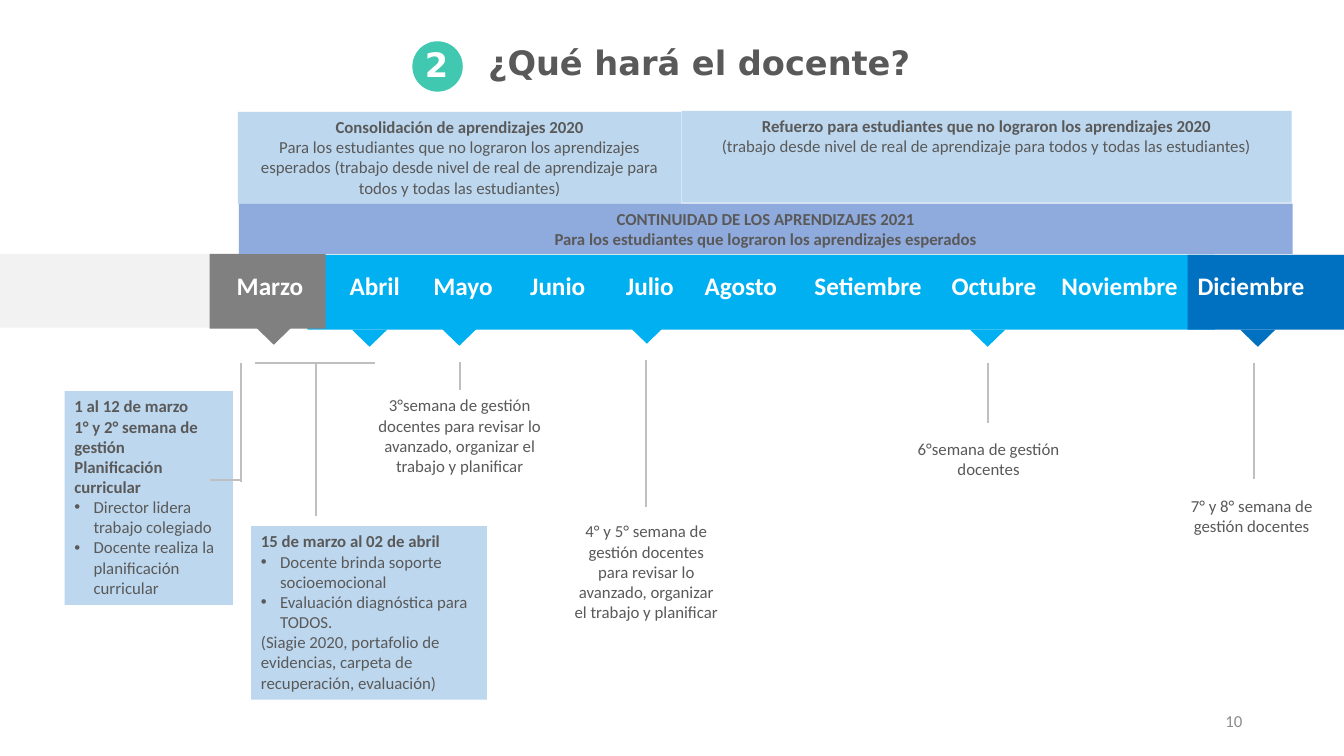
from lxml.etree import SubElement
from pptx import Presentation
from pptx.dml.color import RGBColor
from pptx.enum.shapes import MSO_CONNECTOR, MSO_SHAPE
from pptx.enum.text import MSO_ANCHOR, MSO_AUTO_SIZE, PP_ALIGN
from pptx.oxml.ns import qn
from pptx.util import Pt

WHITE = RGBColor(0xFF, 0xFF, 0xFF)
TEXT_GRAY = RGBColor(0x59, 0x59, 0x59)
NUMBER_GRAY = RGBColor(0x8C, 0x8C, 0x8C)
LINE_GRAY = RGBColor(0xBF, 0xBF, 0xBF)
PALE_GRAY = RGBColor(0xF2, 0xF2, 0xF2)
MARCH_GRAY = RGBColor(0x80, 0x80, 0x80)
SKY = RGBColor(0x00, 0xB0, 0xF0)
DEEP_BLUE = RGBColor(0x00, 0x70, 0xC0)
LIGHT_BLUE = RGBColor(0xBD, 0xD7, 0xEE)
PERIWINKLE = RGBColor(0x8F, 0xAA, 0xDC)
GREEN = RGBColor(0x40, 0xC8, 0xB1)

BODY_FONT, TITLE_FONT = "Calibri", "DejaVu Sans"
PX = 9144
BOLD, PLAIN, BULLET = "bold", "plain", "bullet"

TITLE = "¿Qué hará el docente?"
STEP_NUMBER = "2"
SLIDE_NUMBER = "10"

BANDS = [
    ((0, 252, 1333, 73), PALE_GRAY),
    ((305, 253, 900, 74), SKY),
    ((1178, 253, 155, 74), DEEP_BLUE),
    ((208, 252, 115, 74), MARCH_GRAY),
]
MONTHS = [
    ("Marzo", 225, 87), ("Abril", 337, 70), ("Mayo", 420, 79),
    ("Junio", 516, 75), ("Julio", 611, 68), ("Agosto", 689, 92),
    ("Setiembre", 798, 127), ("Octubre", 934, 105),
    ("Noviembre", 1043, 136), ("Diciembre", 1178, 127),
]
MARKERS = [
    (254, 325, MARCH_GRAY), (349, 327, SKY), (438, 326, SKY),
    (624, 324, SKY), (962, 327, SKY), (1230, 327, DEEP_BLUE),
]
LINES = [
    (239, 360, 239, 478), (208, 476, 239, 476), (253, 360, 372, 360),
    (313, 360, 313, 512), (641, 357, 641, 503), (980, 360, 980, 420),
    (1244, 360, 1244, 475),
]
PANELS = [
    ((64, 388, 167, 212), LIGHT_BLUE, PP_ALIGN.LEFT, [
        ("1 al 12 de marzo", BOLD),
        ("1° y 2° semana de gestión", BOLD),
        ("Planificación curricular", BOLD),
        ("Director lidera trabajo colegiado", BULLET),
        ("Docente realiza la planificación curricular", BULLET),
    ]),
    ((249, 522, 234, 172), LIGHT_BLUE, PP_ALIGN.LEFT, [
        ("15 de marzo al 02 de abril", BOLD),
        ("Docente brinda soporte socioemocional", BULLET),
        ("Evaluación diagnóstica para TODOS.", BULLET),
        ("(Siagie 2020, portafolio de evidencias, carpeta de recuperación, evaluación)", PLAIN),
    ]),
    ((236, 111, 440, 91), LIGHT_BLUE, PP_ALIGN.CENTER, [
        ("Consolidación de aprendizajes 2020", BOLD),
        ("Para los estudiantes que no lograron los aprendizajes esperados "
         "(trabajo desde nivel de real de aprendizaje para todos y todas las estudiantes)", PLAIN),
    ]),
    ((676, 110, 605, 91), LIGHT_BLUE, PP_ALIGN.CENTER, [
        ("Refuerzo para estudiantes que no lograron los aprendizajes 2020", BOLD),
        ("(trabajo desde nivel de real de aprendizaje para todos y todas las estudiantes)", PLAIN),
    ]),
    ((237, 202, 1045, 50), PERIWINKLE, PP_ALIGN.CENTER, [
        ("CONTINUIDAD DE LOS APRENDIZAJES 2021", BOLD),
        ("Para los estudiantes que lograron los aprendizajes esperados", BOLD),
    ]),
]
MAY_NOTE = ((353, 387, 206, 91), "3°semana de gestión docentes para revisar lo avanzado, organizar el trabajo y planificar")
NOTES = [
    ((559, 512, 164, 111), "4° y 5° semana de gestión docentes para revisar lo avanzado, organizar el trabajo y planificar"),
    ((877, 430, 207, 50), "6°semana de gestión docentes"),
    ((1165, 487, 153, 50), "7° y 8° semana de gestión docentes"),
]

presentation = Presentation()
presentation.slide_width, presentation.slide_height = 1333 * PX, 750 * PX
slide = presentation.slides.add_slide(presentation.slide_layouts[5])


def scaled(box):
    return [value * PX for value in box]


def add_filled(kind, box, color):
    shape = slide.shapes.add_shape(kind, *scaled(box))
    shape.shadow.inherit = False
    shape.fill.solid()
    shape.fill.fore_color.rgb = color
    shape.line.fill.background()
    return shape


def write(shape, paragraphs, align, size=12, color=TEXT_GRAY, font=BODY_FONT,
          wrap=True, anchor=MSO_ANCHOR.TOP, fit=MSO_AUTO_SIZE.SHAPE_TO_FIT_TEXT):
    frame = shape.text_frame
    frame.word_wrap = wrap
    frame.auto_size = fit
    frame.vertical_anchor = anchor
    for index, (text, style) in enumerate(paragraphs):
        paragraph = frame.add_paragraph() if index else frame.paragraphs[0]
        paragraph.alignment = align
        if style == BULLET:
            properties = paragraph._p.get_or_add_pPr()
            properties.set("marL", str(19 * PX))
            properties.set("indent", str(-19 * PX))
            SubElement(properties, qn("a:buFont")).set("typeface", "Arial")
            SubElement(properties, qn("a:buChar")).set("char", "•")
        run = paragraph.add_run()
        run.text = text
        run.font.name = font
        run.font.size = Pt(size)
        run.font.bold = style == BOLD
        run.font.color.rgb = color


def add_text(box, text, style, align, **options):
    text_box = slide.shapes.add_textbox(*scaled(box))
    write(text_box, [(text, style)], align, **options)
    return text_box


def add_line(ends):
    connector = slide.shapes.add_connector(MSO_CONNECTOR.STRAIGHT, *scaled(ends))
    connector.line.color.rgb = LINE_GRAY
    connector.line.width = Pt(1.5)
    SubElement(connector._element.spPr, qn("a:effectLst"))
    return connector


title = slide.shapes.title
title.left, title.top, title.width, title.height = scaled((444, 45, 746, 39))
write(title, [(TITLE, BOLD)], PP_ALIGN.LEFT, size=24, font=TITLE_FONT,
      anchor=MSO_ANCHOR.MIDDLE, fit=MSO_AUTO_SIZE.NONE)
title.text_frame.margin_left = 40 * PX
title.text_frame.margin_right = 7 * PX
title.text_frame.margin_top = title.text_frame.margin_bottom = 7 * PX
title.text_frame.paragraphs[0].line_spacing = 0.9

add_filled(MSO_SHAPE.OVAL, (409, 41, 50, 50), GREEN)
step = add_text((408, 45, 50, 43), STEP_NUMBER, BOLD, PP_ALIGN.CENTER, size=24, color=WHITE,
                font=TITLE_FONT, anchor=MSO_ANCHOR.MIDDLE, fit=MSO_AUTO_SIZE.NONE)
step.text_frame.paragraphs[0].line_spacing = 0.9

for box, color in BANDS:
    add_filled(MSO_SHAPE.RECTANGLE, box, color)
for month, left, width in MONTHS:
    add_text((left, 263, width, 40), month, BOLD, PP_ALIGN.LEFT, size=18, color=WHITE, wrap=False)
for box, color, align, paragraphs in PANELS:
    write(add_filled(MSO_SHAPE.RECTANGLE, box, color), paragraphs, align)
for left, top, color in MARKERS:
    add_filled(MSO_SHAPE.ISOSCELES_TRIANGLE, (left, top, 35, 17), color).rotation = 180
for ends in LINES:
    add_line(ends)

for box, text in NOTES:
    add_text(box, text, PLAIN, PP_ALIGN.CENTER)
may_box, may_text = MAY_NOTE
may_note = add_text(may_box, may_text, PLAIN, PP_ALIGN.CENTER)
may_center = may_box[0] + may_box[2] // 2
add_line((may_center, 359, may_center, may_box[1])).end_connect(may_note, 0)

add_text((942, 695, 300, 40), SLIDE_NUMBER, PLAIN, PP_ALIGN.RIGHT, color=NUMBER_GRAY,
         anchor=MSO_ANCHOR.MIDDLE, fit=MSO_AUTO_SIZE.NONE)

presentation.save("out.pptx")
